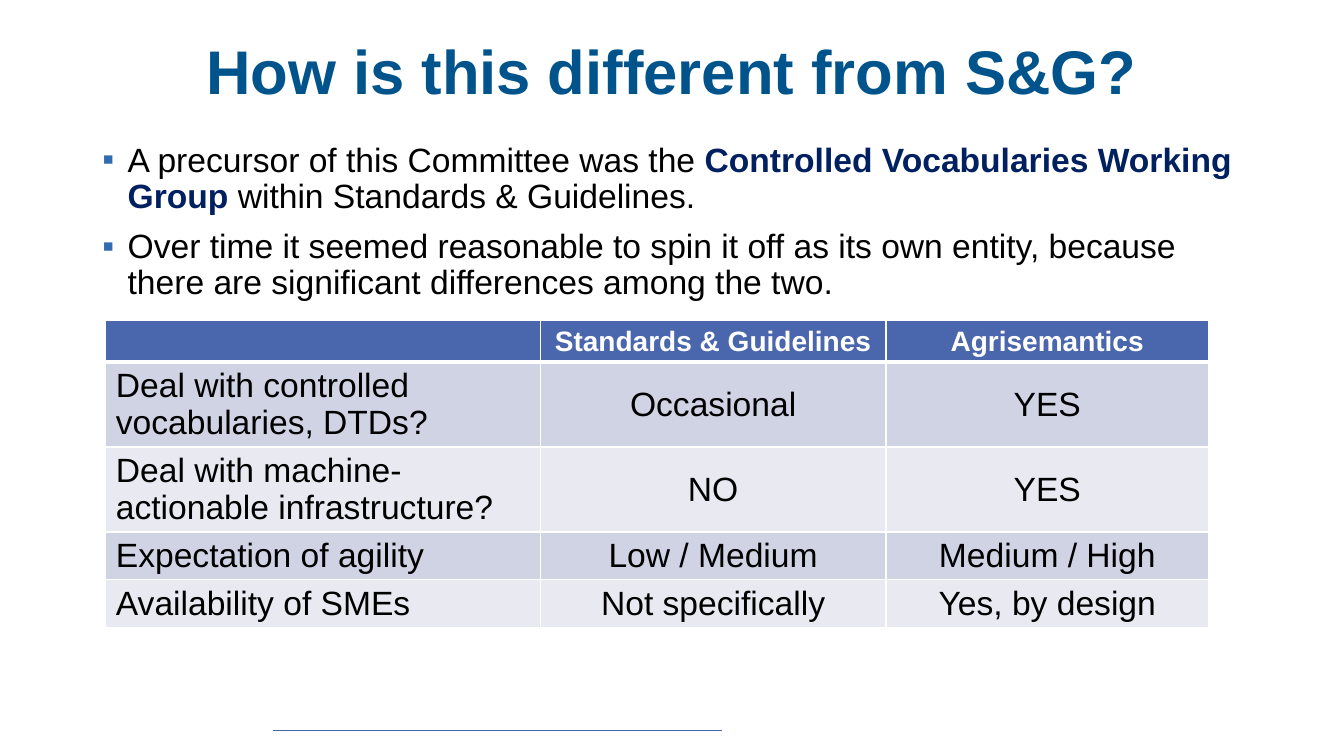
from lxml import etree
from pptx import Presentation
from pptx.dml.color import RGBColor
from pptx.enum import shapes, text
from pptx.oxml import ns
from pptx.util import Pt

COLORS = {
    "title": "00548B", "bullet": "306CB0", "accent": "002060", "text": "000000",
    "header": "4A66AC", "odd": "D0D3E3", "even": "E9EAF1", "white": "FFFFFF",
}
FONT = "Arial"
TITLE = "How is this different from S&G?"
POINTS = [
    [("A precursor of this Committee was the ", False),
     ("Controlled Vocabularies Working Group", True),
     (" within Standards & Guidelines.", False)],
    [("Over time it seemed reasonable to spin it off as its own entity, because "
      "there are significant differences among the two.", False)],
]
COMPARISON = [
    ("", "Standards & Guidelines", "Agrisemantics"),
    ("Deal with controlled vocabularies, DTDs?", "Occasional", "YES"),
    ("Deal with machine-actionable infrastructure?", "NO", "YES"),
    ("Expectation of agility", "Low / Medium", "Medium / High"),
    ("Availability of SMEs", "Not specifically", "Yes, by design"),
]
COLUMN_WIDTHS = (310.3, 247, 230.4)
ROW_HEIGHTS = (29.5, 60.5, 60.5, 34, 34)


def rgb(name):
    return RGBColor.from_string(COLORS[name])


def add_run(paragraph, words, size, color, bold=False):
    run = paragraph.add_run()
    run.text = words
    run.font.name, run.font.size, run.font.bold = FONT, Pt(size), bold
    run.font.color.rgb = rgb(color)


def place(placeholder, left, top, width, height):
    placeholder.left, placeholder.top = Pt(left), Pt(top)
    placeholder.width, placeholder.height = Pt(width), Pt(height)
    placeholder.text_frame.word_wrap = True
    placeholder.text_frame.auto_size = text.MSO_AUTO_SIZE.NONE


def add_bullet(paragraph):
    props = paragraph._p.get_or_add_pPr()
    props.set("marL", str(Pt(18)))
    props.set("indent", str(-Pt(18)))
    color = etree.SubElement(props, ns.qn("a:buClr"))
    etree.SubElement(color, ns.qn("a:srgbClr"), val=COLORS["bullet"])
    etree.SubElement(props, ns.qn("a:buFont"), typeface=FONT)
    etree.SubElement(props, ns.qn("a:buChar"), char="▪")


def add_borders(cell, top, bottom):
    props = cell._tc.get_or_add_tcPr()
    for side, width in (("L", 1), ("R", 1), ("T", top), ("B", bottom)):
        border = etree.SubElement(props, ns.qn(f"a:ln{side}"), w=str(Pt(width)))
        fill = etree.SubElement(border, ns.qn("a:solidFill"))
        etree.SubElement(fill, ns.qn("a:srgbClr"), val=COLORS["white"])


def add_comparison(slide):
    table = slide.shapes.add_table(
        len(COMPARISON), len(COLUMN_WIDTHS), Pt(75.6), Pt(229),
        Pt(sum(COLUMN_WIDTHS)), Pt(sum(ROW_HEIGHTS))).table
    for column, width in zip(table.columns, COLUMN_WIDTHS):
        column.width = Pt(width)
    for r, (answers, height) in enumerate(zip(COMPARISON, ROW_HEIGHTS)):
        table.rows[r].height = Pt(height)
        header = r == 0
        band = "header" if header else "odd" if r % 2 else "even"
        for c, answer in enumerate(answers):
            cell = table.cell(r, c)
            add_borders(cell, 3 if r == 1 else 1, 3 if header else 1)
            cell.fill.solid()
            cell.fill.fore_color.rgb = rgb(band)
            paragraph = cell.text_frame.paragraphs[0]
            if c:
                paragraph.alignment = text.PP_ALIGN.CENTER
                if not header:
                    cell.vertical_anchor = text.MSO_ANCHOR.MIDDLE
            if answer:
                add_run(paragraph, answer, 20 if header else 24,
                        "white" if header else "text", header)


def main():
    deck = Presentation()
    deck.slide_width, deck.slide_height = Pt(960), Pt(540)
    slide = deck.slides.add_slide(deck.slide_layouts[1])
    title, body = slide.placeholders

    rule = slide.shapes.add_connector(
        shapes.MSO_CONNECTOR.STRAIGHT, Pt(195), Pt(522), Pt(516), Pt(522))
    rule.line.color.rgb = rgb("header")
    rule.line.width = Pt(1)
    etree.SubElement(rule._element.spPr, ns.qn("a:effectLst"))

    place(title, 0, 1.4, 960, 104.4)
    title.text_frame.vertical_anchor = text.MSO_ANCHOR.MIDDLE
    heading = title.text_frame.paragraphs[0]
    heading.alignment = text.PP_ALIGN.CENTER
    heading.line_spacing = 0.9
    add_run(heading, TITLE, 44, "title", True)

    place(body, 66, 98.6, 828, 140.4)
    for i, point in enumerate(POINTS):
        frame = body.text_frame
        paragraph = frame.add_paragraph() if i else frame.paragraphs[0]
        paragraph.line_spacing = 0.9
        paragraph.space_before = Pt(10 if i else 0)
        add_bullet(paragraph)
        for words, strong in point:
            add_run(paragraph, words, 24, "accent" if strong else "text", strong)

    add_comparison(slide)
    deck.save("out.pptx")


if __name__ == "__main__":
    main()
